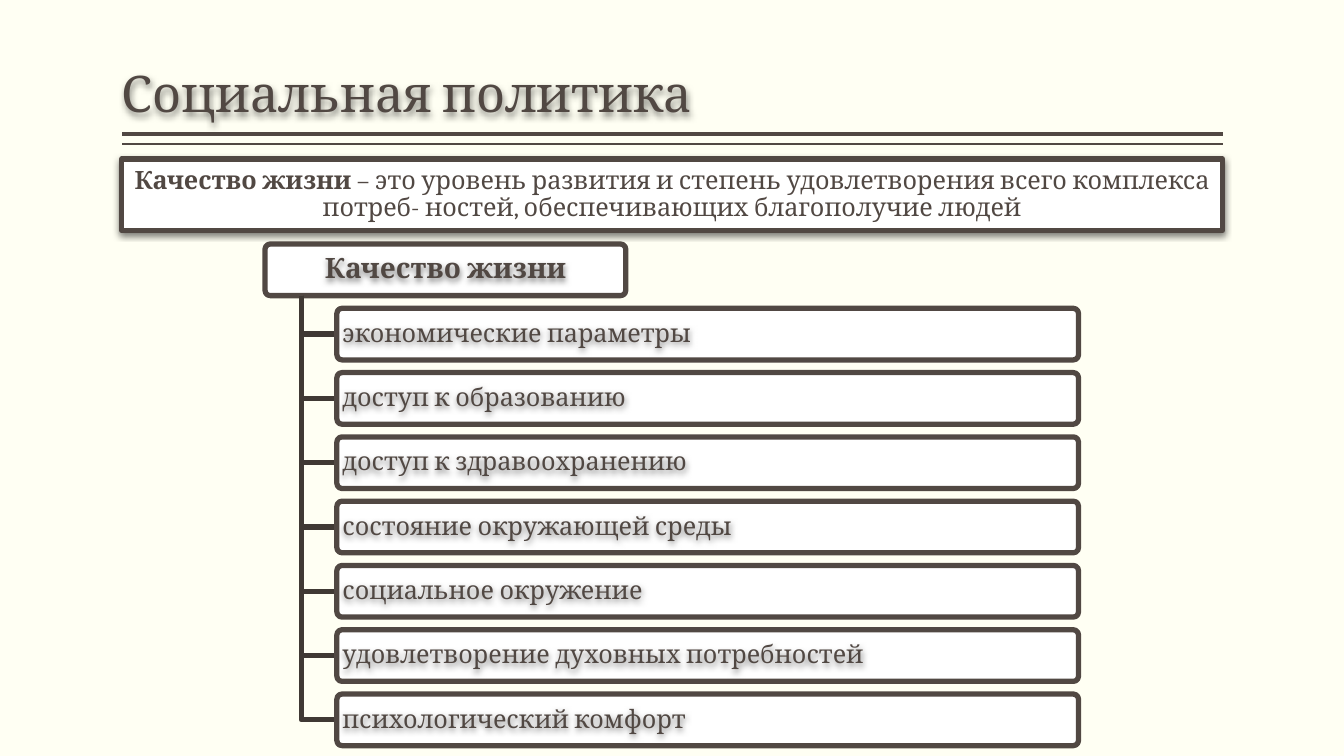
import pptx
import pptx.util
import pptx.dml.color
import pptx.enum.shapes
import pptx.enum.text
import lxml.etree
from pptx.util import Cm, Pt

BACKGROUND = pptx.dml.color.RGBColor(0xFF, 0xFF, 0xF3)
BROWN = pptx.dml.color.RGBColor(0x51, 0x48, 0x43)
DARK_BROWN = pptx.dml.color.RGBColor(0x40, 0x39, 0x34)
WHITE = pptx.dml.color.RGBColor(0xFF, 0xFF, 0xFF)
SHADOW = (
    '<a:outerShdw xmlns:a="http://schemas.openxmlformats.org/drawingml/2006/main" '
    'blurRad="57150" dist="19050" dir="5400000" algn="ctr" rotWithShape="0">'
    '<a:srgbClr val="000000"><a:alpha val="50000"/></a:srgbClr></a:outerShdw>'
)
ALIGN = pptx.enum.text.PP_ALIGN
ANCHOR = pptx.enum.text.MSO_ANCHOR
SHAPE = pptx.enum.shapes.MSO_SHAPE


def fill_text(shape, runs, size, align, anchor, side, edge):
    shape.shadow.inherit = False
    effects = shape._element.spPr.find(pptx.oxml.ns.qn("a:effectLst"))
    effects.append(lxml.etree.fromstring(SHADOW))
    frame = shape.text_frame
    frame.auto_size = pptx.enum.text.MSO_AUTO_SIZE.NONE
    frame.word_wrap = True
    frame.vertical_anchor = anchor
    frame.margin_left = frame.margin_right = Cm(side)
    frame.margin_top = frame.margin_bottom = Cm(edge)
    paragraph = frame.paragraphs[0]
    paragraph.alignment = align
    paragraph.line_spacing = 0.9
    paragraph.font.name = "Cambria"
    paragraph.font.size = Pt(size)
    paragraph.font.color.rgb = BROWN
    for text, bold in runs:
        run = paragraph.add_run()
        run.text = text
        run.font.bold = bold


def add_box(kind, left, top, width, height):
    box = slide.shapes.add_shape(kind, Cm(left), Cm(top), Cm(width), Cm(height))
    box.shadow.inherit = False
    box.fill.solid()
    box.fill.fore_color.rgb = WHITE
    box.line.color.rgb = BROWN
    box.line.width = Pt(3.78)
    return box


presentation = pptx.Presentation()
presentation.slide_width = Cm(33.87)
presentation.slide_height = Cm(19.05)
slide = presentation.slides.add_slide(presentation.slide_layouts[5])
slide.background.fill.solid()
slide.background.fill.fore_color.rgb = BACKGROUND

left, right = 3.07, 30.81
for y, weight in ((3.38, 3), (3.63, 1)):
    rule = slide.shapes.add_connector(
        pptx.enum.shapes.MSO_CONNECTOR.STRAIGHT, Cm(right), Cm(y), Cm(left), Cm(y))
    rule.line.color.rgb = BROWN
    rule.line.width = Pt(weight)
    lxml.etree.SubElement(rule._element.spPr, pptx.oxml.ns.qn("a:effectLst"))

title = slide.shapes.title
title.left, title.top = Cm(left), Cm(0.2)
title.width, title.height = Cm(right - left), Cm(3.05)
fill_text(title, [("Социальная политика", False)], 36, ALIGN.LEFT, ANCHOR.BOTTOM, 0, 0.13)

root_top, pitch, box_height = 6.15, 1.62, 1.3
trunk_x, item_left = 7.59, 8.49
items = [
    "экономические параметры",
    "доступ к образованию",
    "доступ к здравоохранению",
    "состояние окружающей среды",
    "социальное окружение",
    "удовлетворение духовных потребностей",
    "психологический комфорт",
]
nodes = [("Качество жизни", 6.68, 9.09, 20, True, ALIGN.CENTER)]
nodes += [(item, item_left, 18.69, 18, False, ALIGN.LEFT) for item in items]

for index, (text, node_left, width, size, bold, align) in enumerate(nodes):
    top = root_top + index * pitch
    if index:
        middle = Cm(top + box_height / 2)
        builder = slide.shapes.build_freeform(Cm(trunk_x), Cm(root_top + box_height))
        builder.add_line_segments(
            [(Cm(trunk_x), middle), (Cm(item_left), middle)], close=False)
        branch = builder.convert_to_shape()
        branch.shadow.inherit = False
        branch.fill.background()
        branch.line.color.rgb = DARK_BROWN
        branch.line.width = Pt(3.78)
    box = add_box(SHAPE.ROUNDED_RECTANGLE, node_left, top, width, box_height)
    box.adjustments[0] = 0.1
    label = slide.shapes.add_textbox(
        Cm(node_left + 0.04), Cm(top + 0.04), Cm(width - 0.08), Cm(box_height - 0.08))
    fill_text(label, [(text, bold)], size, align, ANCHOR.MIDDLE, 0.1, 0.06)

definition = add_box(SHAPE.RECTANGLE, left, 4.01, right - left, 1.8)
definition_runs = [
    ("Качество жизни ", True),
    ("– это уровень развития и степень удовлетворения всего комплекса "
     "потреб- ностей, обеспечивающих благополучие людей", False),
]
fill_text(definition, definition_runs, 18, ALIGN.CENTER, ANCHOR.MIDDLE, 0.03, 0.03)

presentation.save("out.pptx")
